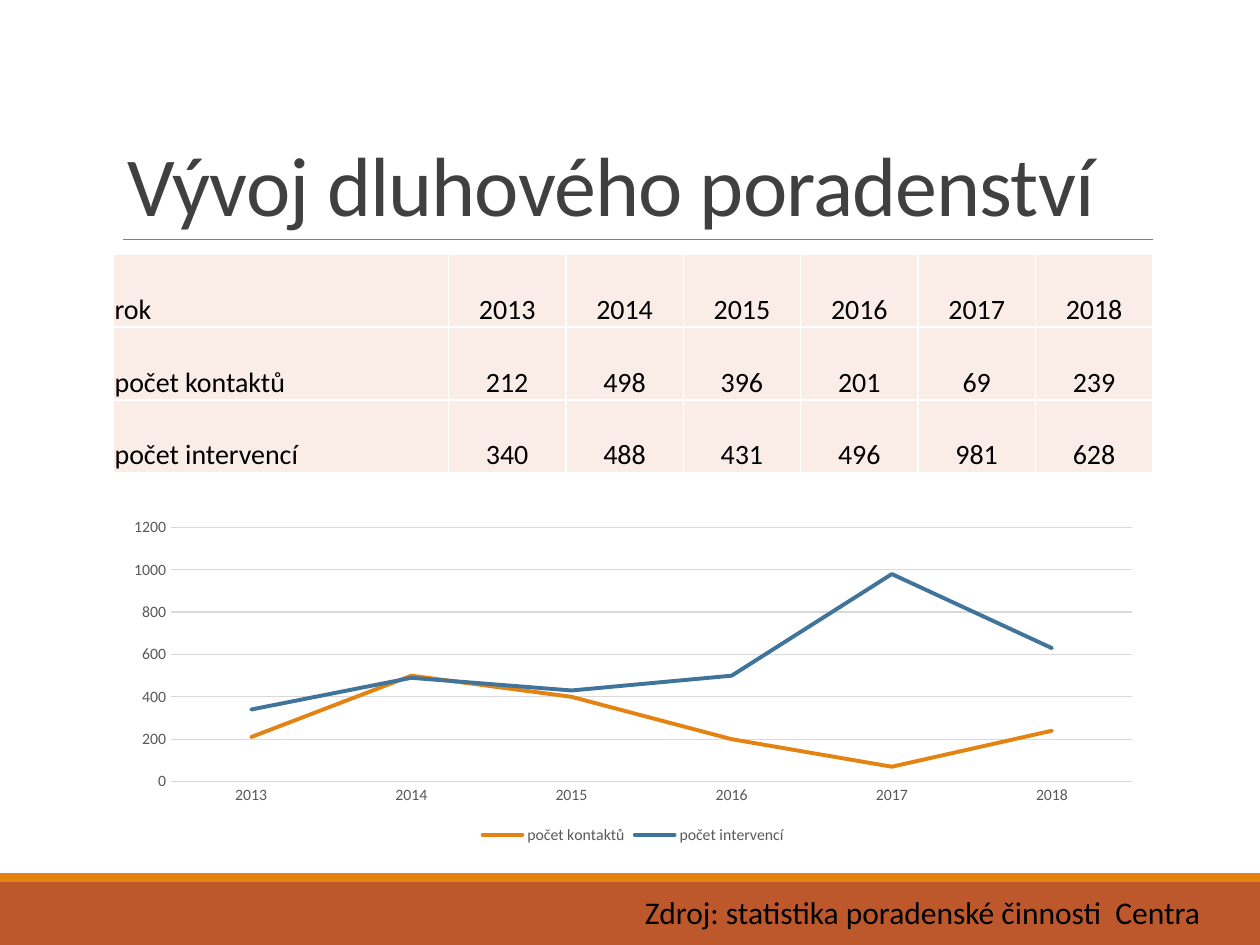
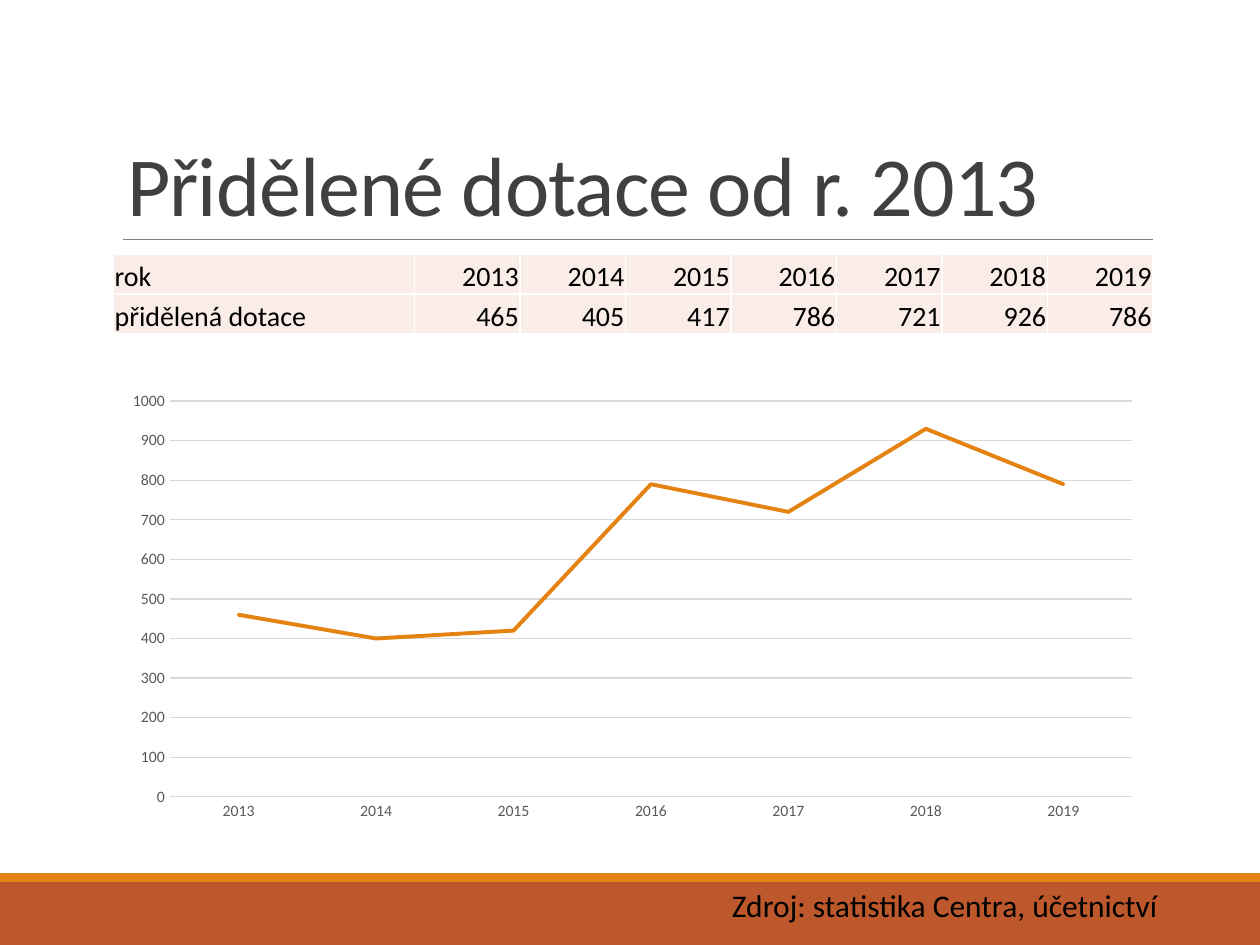
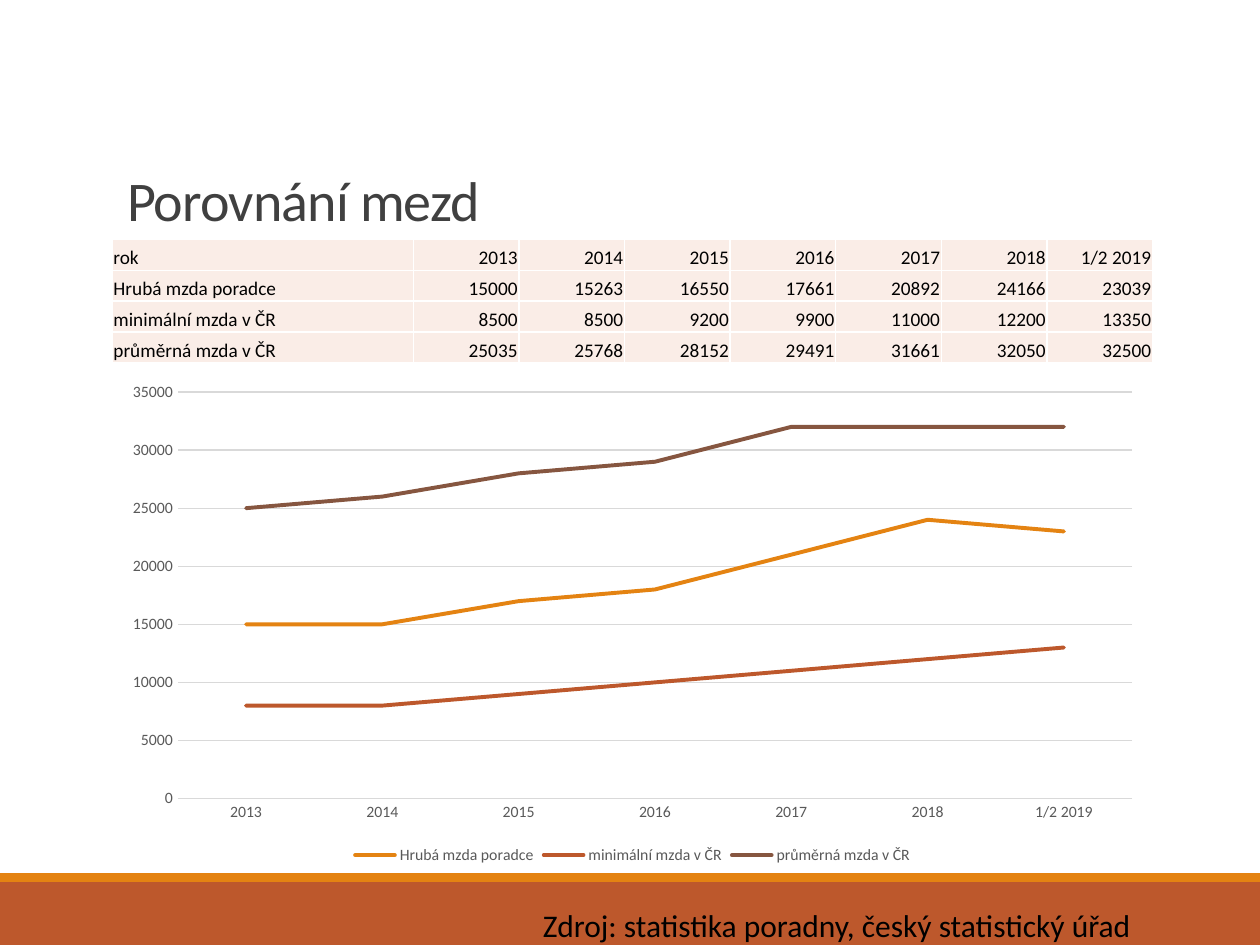
import pptx
import pptx.chart.data
import pptx.dml.color
import pptx.enum.chart
import pptx.enum.shapes
import pptx.enum.text
import pptx.oxml
import pptx.oxml.ns
import pptx.util
from pptx.util import Inches

FONT = "Calibri"
COLORS = {
    "background": "FFFFFF", "band": "BD582C", "orange": "E48312",
    "blue": "40749B", "brown": "865640", "rule": "808080",
    "title": "404040", "text": "000000", "cell": "FAEDE7",
    "border": "FFFFFF", "axis_text": "595959", "grid": "D9D9D9",
}
ALIGN = pptx.enum.text.PP_ALIGN
ANCHOR = pptx.enum.text.MSO_ANCHOR


def rgb(name):
    return pptx.dml.color.RGBColor.from_string(COLORS[name])


class Deck:
    """Holds the shared style and the current slide."""

    def __init__(self):
        self.prs = pptx.Presentation()
        self.prs.slide_width = Inches(10)
        self.prs.slide_height = Inches(7.5)
        self.slide = None

    def style_font(self, font, size, color):
        font.name = FONT
        font.size = pptx.util.Pt(size)
        font.color.rgb = rgb(color)

    def style_line(self, line, color, width):
        line.color.rgb = rgb(color)
        line.width = pptx.util.Pt(width)

    def add_run(self, paragraph, text, size, color="text"):
        run = paragraph.add_run()
        run.text = text
        self.style_font(run.font, size, color)
        return run

    def new_slide(self, title, title_size=48):
        self.slide = self.prs.slides.add_slide(self.prs.slide_layouts[6])
        fill = self.slide.background.fill
        fill.solid()
        fill.fore_color.rgb = rgb("background")
        self.band(7, 0.5, "band")
        self.band(6.93, 0.07, "orange")
        self.title_rule()
        self.title(title, title_size)

    def band(self, top, height, color):
        band = self.slide.shapes.add_shape(
            pptx.enum.shapes.MSO_SHAPE.RECTANGLE,
            Inches(0), Inches(top), Inches(10), Inches(height))
        band.shadow.inherit = False
        band.fill.solid()
        band.fill.fore_color.rgb = rgb(color)
        band.line.fill.background()

    def title_rule(self):
        rule = self.slide.shapes.add_connector(
            pptx.enum.shapes.MSO_CONNECTOR.STRAIGHT,
            Inches(0.98), Inches(1.9), Inches(9.15), Inches(1.9))
        self.style_line(rule.line, "rule", 0.5)
        rule._element.spPr.append(pptx.oxml.parse_xml(
            f'<a:effectLst {pptx.oxml.ns.nsdecls("a")}/>'))

    def text_frame(self, left, top, width, height):
        box = self.slide.shapes.add_textbox(
            Inches(left), Inches(top), Inches(width), Inches(height))
        box.text_frame.word_wrap = True
        return box.text_frame

    def title(self, text, size):
        frame = self.text_frame(0.91, 0.31, 8.25, 1.59)
        frame.vertical_anchor = ANCHOR.BOTTOM
        paragraph = frame.paragraphs[0]
        paragraph.line_spacing = 0.85
        run = self.add_run(paragraph, text, size, "title")
        run._r.get_or_add_rPr().set("spc", "-50")

    def credit(self, text, left, top, width):
        frame = self.text_frame(left, top, width, 0.4)
        self.add_run(frame.paragraphs[0], text, 18)

    def table(self, years, rows, left, top, width, height, label_width,
              size=16, align=ALIGN.RIGHT):
        lines = [("rok", years)] + rows
        table = self.slide.shapes.add_table(
            len(lines), len(years) + 1, Inches(left), Inches(top),
            Inches(width), Inches(height)).table
        table.first_row = table.horz_banding = False
        year_width = (width - label_width) / len(years)
        for i, column in enumerate(table.columns):
            column.width = Inches(year_width if i else label_width)
        for r, (label, values) in enumerate(lines):
            table.rows[r].height = Inches(height / len(lines))
            for c, value in enumerate([label, *values]):
                self.cell(table.cell(r, c), str(value), size,
                          align if c else ALIGN.LEFT)

    def cell(self, cell, text, size, align):
        cell.margin_left = cell.margin_right = cell.margin_top = Inches(0.01)
        cell.margin_bottom = 0
        cell.vertical_anchor = ANCHOR.BOTTOM
        properties = cell._tc.get_or_add_tcPr()
        for side in "LRTB":
            properties.append(pptx.oxml.parse_xml(
                f'<a:ln{side} {pptx.oxml.ns.nsdecls("a")} w="12700"><a:solidFill>'
                f'<a:srgbClr val="{COLORS["border"]}"/></a:solidFill></a:ln{side}>'))
        cell.fill.solid()
        cell.fill.fore_color.rgb = rgb("cell")
        paragraph = cell.text_frame.paragraphs[0]
        paragraph.alignment = align
        self.add_run(paragraph, text, size)

    def line_chart(self, years, rows, colors, left, top, width, height,
                   maximum, step, precision=-1):
        data = pptx.chart.data.CategoryChartData()
        data.categories = years
        for label, values in rows:
            data.add_series(label, [round(value, precision) for value in values])
        chart = self.slide.shapes.add_chart(
            pptx.enum.chart.XL_CHART_TYPE.LINE, Inches(left), Inches(top),
            Inches(width), Inches(height), data).chart
        self.style_font(chart.font, 10, "text")
        chart.has_title = False
        chart.has_legend = len(rows) > 1
        if chart.has_legend:
            chart.legend.position = pptx.enum.chart.XL_LEGEND_POSITION.BOTTOM
            chart.legend.include_in_layout = False
            self.style_font(chart.legend.font, 9, "axis_text")

        # Axes
        for axis in (chart.category_axis, chart.value_axis):
            axis.major_tick_mark = pptx.enum.chart.XL_TICK_MARK.NONE
            axis.minor_tick_mark = pptx.enum.chart.XL_TICK_MARK.NONE
            self.style_font(axis.tick_labels.font, 9, "axis_text")
        self.style_line(chart.category_axis.format.line, "grid", 0.75)
        scale = chart.value_axis
        scale.format.line.fill.background()
        scale.minimum_scale, scale.maximum_scale = 0, maximum
        scale.major_unit = step
        self.style_line(scale.major_gridlines.format.line, "grid", 0.75)

        # Series with round line ends
        plot = chart.plots[0]
        plot.vary_by_categories = False
        for series, color in zip(plot.series, colors):
            series.smooth = False
            self.style_line(series.format.line, color, 2.25)
            for stroke in series._element.iter(pptx.oxml.ns.qn("a:ln")):
                stroke.set("cap", "rnd")


def main():
    deck = Deck()
    years = [str(year) for year in range(2013, 2020)]

    # Debt counselling
    counselling = [
        ("počet kontaktů", [212, 498, 396, 201, 69, 239]),
        ("počet intervencí", [340, 488, 431, 496, 981, 628]),
    ]
    deck.new_slide("Vývoj dluhového poradenství")
    deck.table(years[:-1], counselling, 0.9, 2.02, 8.25, 1.73, 2.66,
               align=ALIGN.CENTER)
    deck.line_chart(years[:-1], counselling, ["orange", "blue"],
                    0.9, 4.06, 8.25, 2.68, 1200, 200)
    deck.credit("Zdroj: statistika poradenské činnosti  Centra", 5.02, 7.04, 5.87)

    # Subsidies
    subsidies = [("přidělená dotace", [465, 405, 417, 786, 721, 926, 786])]
    deck.new_slide("Přidělené dotace od r. 2013")
    deck.table(years, subsidies, 0.9, 2.02, 8.25, 0.63, 2.39)
    deck.line_chart(years, subsidies, ["orange"],
                    0.89, 3.04, 8.26, 3.54, 1000, 100)
    deck.credit("Zdroj: statistika Centra, účetnictví", 5.71, 6.98, 3.94)

    # Wages
    wage_years = years[:-1] + ["1/2 2019"]
    wages = [
        ("Hrubá mzda poradce", [15000, 15263, 16550, 17661, 20892, 24166, 23039]),
        ("minimální mzda v ČR", [8500, 8500, 9200, 9900, 11000, 12200, 13350]),
        ("průměrná mzda v ČR", [25035, 25768, 28152, 29491, 31661, 32050, 32500]),
    ]
    deck.new_slide("Porovnání mezd", title_size=32)
    deck.table(wage_years, wages, 0.89, 1.9, 8.26, 0.98, 2.39, size=11)
    deck.line_chart(wage_years, wages, ["orange", "band", "brown"],
                    0.89, 2.96, 8.26, 3.94, 35000, 5000, precision=-3)
    deck.credit("Zdroj: statistika poradny, český statistický úřad", 4.21, 7.14, 5.79)

    deck.prs.save("out.pptx")


if __name__ == "__main__":
    main()
